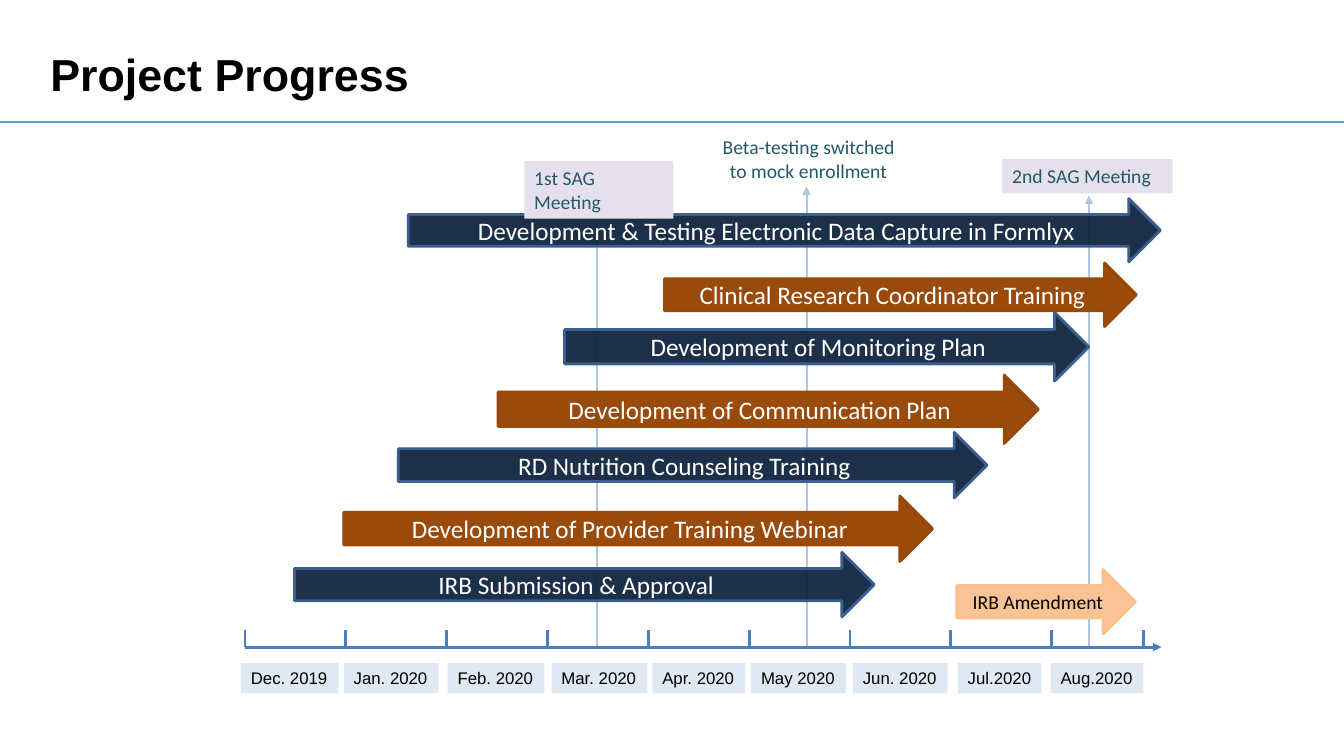
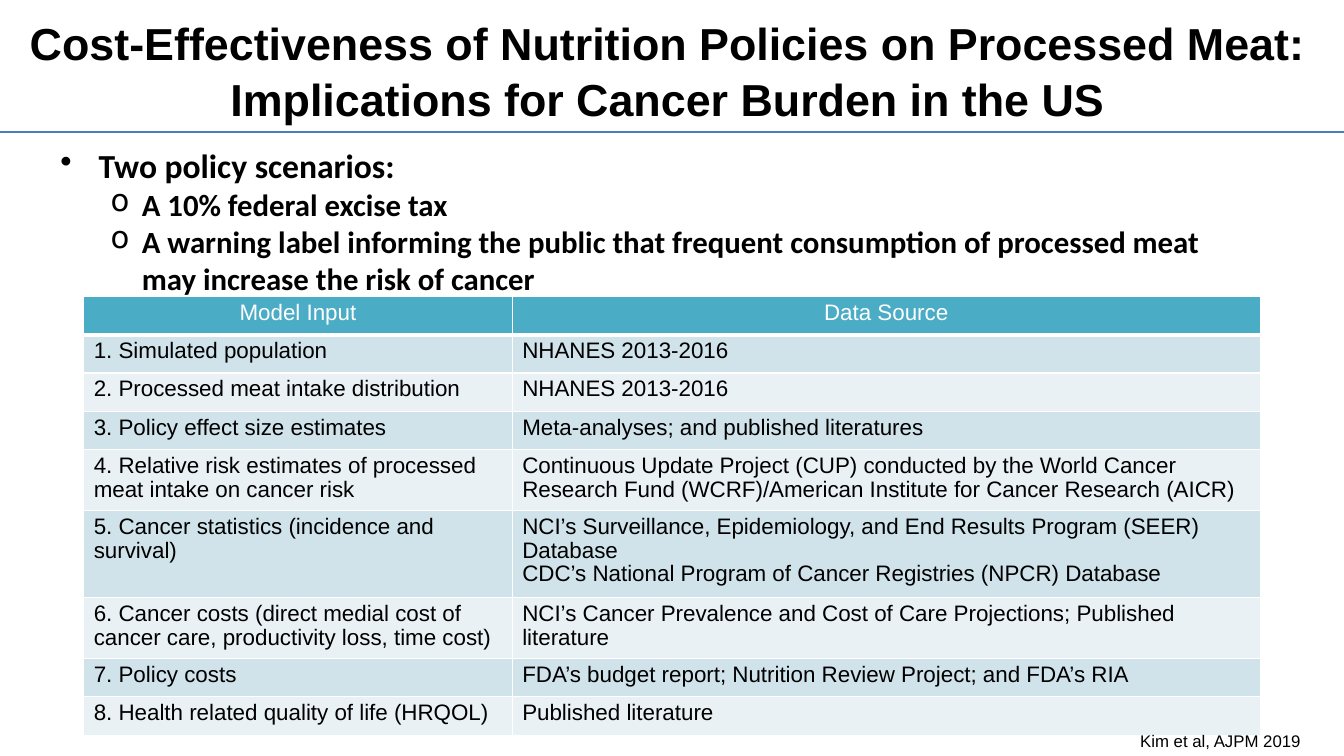
from lxml.etree import SubElement
from pptx import Presentation
from pptx.dml.color import RGBColor
from pptx.enum.shapes import MSO_CONNECTOR, MSO_SHAPE
from pptx.enum.text import MSO_ANCHOR, PP_ALIGN
from pptx.oxml.ns import qn
from pptx.util import Inches, Pt

BLACK, WHITE = "000000", "FFFFFF"
NAVY, BROWN, PEACH = "0F243E", "984807", "FAC090"
BLUE, PALE, TEAL = "4B7EBC", "B0C6E1", "215968"
LILAC, MONTH = "E6E0EC", "4F81BD"
HEAD, BANDS = "4BACC6", ("E9F1F5", "D0E3EA")
LEFT, MID = PP_ALIGN.LEFT, PP_ALIGN.CENTER
hue = RGBColor.from_string


def write(frame, lines, size, color=BLACK, font="Calibri", bold=False,
          align=LEFT, space=None, anchor=MSO_ANCHOR.TOP, wrap=True):
    """Fill a text frame with one paragraph per line."""
    frame.word_wrap = wrap
    frame.vertical_anchor = anchor
    for i, line in enumerate(lines):
        para = frame.add_paragraph() if i else frame.paragraphs[0]
        para.alignment = align
        para.line_spacing = space
        run = para.add_run()
        run.text = line
        run.font.size = Pt(size)
        run.font.name = font
        run.font.bold = bold
        run.font.color.rgb = hue(color)


def rule(slide, x1, y1, x2, y2, color, width=2, arrow=False):
    """Draw a straight line, with an arrowhead at its end if asked."""
    line = slide.shapes.add_connector(
        MSO_CONNECTOR.STRAIGHT, Inches(x1), Inches(y1), Inches(x2), Inches(y2))
    line.line.color.rgb = hue(color)
    line.line.width = Pt(width)
    props = line._element.spPr
    if arrow:
        SubElement(props.find(qn("a:ln")), qn("a:tailEnd"), type="triangle")
    SubElement(props, qn("a:effectLst"))


deck = Presentation()
deck.slide_width, deck.slide_height = Inches(13.33), Inches(7.5)
blank = deck.slide_layouts[6]

# Titles and the line below each
heads = [
    ("Project Progress", (0.4, 0.09, 9.25, 1.25), LEFT, 1.21, "46AAC5"),
    ("Cost-Effectiveness of Nutrition Policies on Processed Meat: "
     "Implications for Cancer Burden in the US",
     (0, 0.06, 13.25, 1.25), MID, 1.31, BLUE),
]
slides = []
for text, box, align, y, color in heads:
    slide = deck.slides.add_slide(blank)
    title = slide.shapes.add_textbox(*map(Inches, box))
    write(title.text_frame, [text], 32, font="Arial", bold=True, align=align,
          space=1.05, anchor=MSO_ANCHOR.MIDDLE)
    rule(slide, 0, y, 13.33, y, color)
    slides.append(slide)
plan, model = slides

# Timeline: events, axis and month ticks
AXIS = 6.42
for x, top in [(10.8, 1.94), (8, 1.85), (5.92, 1.97)]:
    rule(plan, x, AXIS, x, top, PALE, 1.5, True)
rule(plan, 2.43, AXIS, 11.52, AXIS, BLUE, arrow=True)
for x in [2.43 + i for i in range(9)] + [11.34]:
    rule(plan, x, 6.25, x, AXIS, BLUE)

# Task arrows: text, left, top, width, height, fill, edge, opacity, size, ink
navy = (NAVY, "3A5F8C", 94, 18, WHITE)
brown = (BROWN, BROWN, 98, 18, WHITE)
peach = (PEACH, PEACH, 94, 14, BLACK)
tasks = [
    ("Development & Testing Electronic Data Capture in Formlyx",
     4.05, 1.97, 7.46, 0.63, *navy),
    ("IRB Submission & Approval", 2.92, 5.48, 5.75, 0.64, *navy),
    ("Development of Provider Training Webinar",
     3.41, 4.92, 5.84, 0.65, *brown),
    ("Development of Communication Plan", 4.94, 3.72, 5.36, 0.68, *brown),
    ("Development of Monitoring Plan", 5.6, 3.1, 5.2, 0.68, *navy),
    ("Clinical Research Coordinator Training",
     6.59, 2.61, 4.68, 0.63, *brown),
    ("RD Nutrition Counseling Training", 3.95, 4.29, 5.84, 0.65, *navy),
    ("IRB Amendment", 9.49, 5.65, 1.77, 0.64, *peach),
]
for text, x, y, w, h, fill, edge, alpha, size, ink in tasks:
    task = plan.shapes.add_shape(
        MSO_SHAPE.RIGHT_ARROW, *map(Inches, (x, y, w, h)))
    task.shadow.inherit = False
    task.fill.solid()
    task.fill.fore_color.rgb = hue(fill)
    tone = task._element.spPr.find(qn("a:solidFill"))[0]
    SubElement(tone, qn("a:alpha"), val=str(alpha * 1000))
    task.line.color.rgb = hue(edge)
    task.line.width = Pt(2)
    write(task.text_frame, [text], size, ink, align=MID,
          anchor=MSO_ANCHOR.MIDDLE)

# Month and meeting labels
months = [
    ("Dec. 2019", 2.39, 0.97), ("Jan. 2020", 3.41, 0.94),
    ("Feb. 2020", 4.44, 0.96), ("Mar. 2020", 5.47, 0.95),
    ("Apr. 2020", 6.47, 0.92), ("May 2020", 7.45, 0.94),
    ("Jun. 2020", 8.46, 0.94), ("Jul.2020", 9.5, 0.83),
    ("Aug.2020", 10.42, 0.92),
]
tags = [(text, (x, 6.58, w, 0.3), MONTH, 18, 12, BLACK, "Arial", False)
        for text, x, w in months]
tags += [(text, box, LILAC, 100, 14, TEAL, "Calibri", True) for text, box in [
    ("1st SAG Meeting", (5.2, 1.6, 1.48, 0.57)),
    ("2nd SAG Meeting", (9.94, 1.58, 1.69, 0.34))]]
for text, box, fill, alpha, size, ink, font, wrap in tags:
    tag = plan.shapes.add_shape(MSO_SHAPE.RECTANGLE, *map(Inches, box))
    tag.shadow.inherit = False
    tag.fill.solid()
    tag.fill.fore_color.rgb = hue(fill)
    tone = tag._element.spPr.find(qn("a:solidFill"))[0]
    SubElement(tone, qn("a:alpha"), val=str(alpha * 1000))
    tag.line.fill.background()
    write(tag.text_frame, [text], size, ink, font, wrap=wrap)

note = plan.shapes.add_textbox(*map(Inches, (6.97, 1.29, 2.1, 0.57)))
write(note.text_frame, ["Beta-testing switched to mock enrollment"], 14, TEAL,
      align=MID)

# Policy scenarios
body = model.shapes.add_textbox(*map(Inches, (0.5, 1.39, 12, 1.55)))
write(body.text_frame, [
    "Two policy scenarios:",
    "A 10% federal excise tax",
    "A warning label informing the public that frequent consumption of "
    "processed meat may increase the risk of cancer"], 22, bold=True)
for i, para in enumerate(body.text_frame.paragraphs):
    mark, left, hang = ("o", 0.81, 0.31) if i else ("•", 0.38, 0.38)
    para.level = min(i, 1)
    props = para._p.get_or_add_pPr()
    props.set("marL", str(Inches(left)))
    props.set("indent", str(-Inches(hang)))
    SubElement(props, qn("a:buChar"), char=mark)
body.text_frame.paragraphs[0].runs[0].font.size = Pt(24)

# Model inputs: input, sources, row height
rows = [
    ("Model Input", ["Data Source"], 0.38),
    ("1. Simulated population", ["NHANES 2013-2016"], 0.38),
    ("2. Processed meat intake distribution", ["NHANES 2013-2016"], 0.38),
    ("3. Policy effect size estimates",
     ["Meta-analyses; and published literatures"], 0.38),
    ("4. Relative risk estimates of processed meat intake on cancer risk",
     ["Continuous Update Project (CUP) conducted by the World Cancer Research "
      "Fund (WCRF)/American Institute for Cancer Research (AICR)"], 0.59),
    ("5. Cancer statistics (incidence and survival)",
     ["NCI’s Surveillance, Epidemiology, and End Results Program (SEER) "
      "Database",
      "CDC’s National Program of Cancer Registries (NPCR) Database"], 0.84),
    ("6. Cancer costs (direct medial cost of cancer care, productivity loss, "
     "time cost)",
     ["NCI’s Cancer Prevalence and Cost of Care Projections; "
      "Published literature"], 0.59),
    ("7. Policy costs",
     ["FDA’s budget report; Nutrition Review Project; and FDA’s RIA"], 0.38),
    ("8. Health related quality of life (HRQOL)",
     ["Published literature"], 0.38),
]
grid = model.shapes.add_table(
    len(rows), 2, *map(Inches, (0.83, 2.94, 11.67, 4.3))).table
for col, width in zip(grid.columns, (4.25, 7.42)):
    col.width = Inches(width)
for i, (name, source, height) in enumerate(rows):
    grid.rows[i].height = Inches(height)
    for j, lines in enumerate(([name], source)):
        cell = grid.cell(i, j)
        props = cell._tc.get_or_add_tcPr()
        for side in "LRTB":
            thick = 3 if (i, side) in [(0, "B"), (1, "T")] else 1
            edge = SubElement(props, qn("a:ln" + side), w=str(Pt(thick)))
            fill = SubElement(edge, qn("a:solidFill"))
            SubElement(fill, qn("a:srgbClr"), val=WHITE)
        cell.fill.solid()
        cell.fill.fore_color.rgb = hue(BANDS[i % 2] if i else HEAD)
        write(cell.text_frame, lines, 16, BLACK if i else WHITE, "Arial",
              align=LEFT if i else MID, space=0.95)

cite = model.shapes.add_textbox(*map(Inches, (11.21, 7.2, 1.81, 0.3)))
write(cite.text_frame, ["Kim et al, AJPM 2019"], 12, font="Arial", wrap=False)

deck.save("out.pptx")
